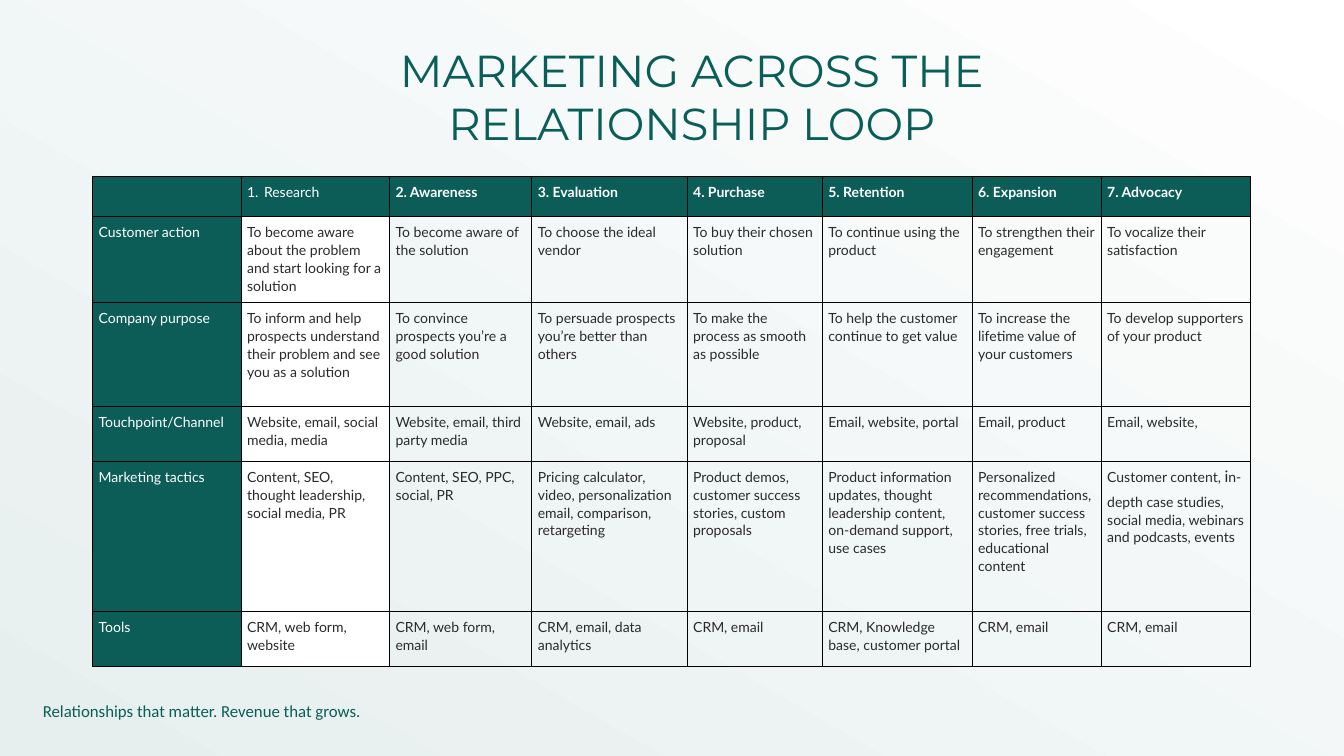
from lxml.etree import SubElement
from pptx import Presentation
from pptx.dml.color import RGBColor
from pptx.enum.text import MSO_ANCHOR as Anchor, MSO_AUTO_SIZE as AutoSize, PP_ALIGN as Align
from pptx.oxml import parse_xml
from pptx.oxml.ns import nsdecls, qn
from pptx.util import Cm, Pt

GREEN = RGBColor(0x0A, 0x5E, 0x58)
HEADER_GREEN = RGBColor(0x0C, 0x5D, 0x58)
INK = RGBColor(0x2B, 0x2A, 0x2A)
WHITE = RGBColor(0xFF, 0xFF, 0xFF)
MIST = RGBColor(0xE6, 0xEE, 0xEE)
BORDER = RGBColor(0, 0, 0)

COLUMN_WIDTHS = [5.61, 5.61, 5.38, 5.87, 5.11, 5.66, 4.88, 5.66]
ROW_HEIGHTS = [1.5, 3.25, 3.94, 2.06, 5.69, 2.06]
CELL_MARGIN = Cm(0.23)
BODY_SIZE = 15

ADVOCACY_TACTICS = [
    ("Customer content, ", 15),
    ("i", 17),
    ("n-depth case studies,", 15),
    (" ", 23),
    ("social media, webinars and podcasts, events", 15),
]

LOOP_STAGES = [
    ["", "Research", "2. Awareness", "3. Evaluation", "4. Purchase",
     "5. Retention", "6. Expansion", "7. Advocacy"],
    ["Customer action",
     "To become aware about the problem and start looking for a solution ",
     "To become aware of the solution",
     "To choose the ideal vendor",
     "To buy their chosen solution",
     "To continue using the product",
     "To strengthen their engagement",
     "To vocalize their satisfaction"],
    ["Company purpose",
     "To inform and help prospects understand their problem and see you as a solution",
     "To convince prospects you’re a good solution",
     "To persuade prospects you’re better than others",
     "To make the process as smooth as possible",
     "To help the customer continue to get value",
     "To increase the lifetime value of your customers",
     "To develop supporters of your product"],
    ["Touchpoint/Channel",
     "Website, email, social media, media",
     "Website, email, third party media",
     "Website, email, ads",
     "Website, product, proposal",
     "Email, website, portal",
     "Email, product",
     "Email, website,"],
    ["Marketing tactics",
     "Content, SEO, thought leadership, social media, PR",
     "Content, SEO, PPC, social, PR",
     "Pricing calculator, video, personalization email, comparison, retargeting",
     "Product demos, customer success stories, custom proposals",
     "Product information updates, thought leadership content, on-demand support, use cases",
     "Personalized recommendations, customer success stories, free trials, educational content",
     ADVOCACY_TACTICS],
    ["Tools",
     "CRM, web form, website",
     "CRM, web form, email",
     "CRM, email, data analytics",
     "CRM, email",
     "CRM, Knowledge base, customer portal",
     "CRM, email",
     "CRM, email"],
]


def add_span(para, text, font_name, size, color, bold=False):
    span = para.add_run()
    span.text = text
    span.font.name = font_name
    span.font.size = Pt(size)
    span.font.bold = bold
    span.font.color.rgb = color


def add_text(page, left, top, width, height, text, font_name, size):
    box = page.shapes.add_textbox(Cm(left), Cm(top), Cm(width), Cm(height))
    box.text_frame.word_wrap = True
    add_span(box.text_frame.paragraphs[0], text, font_name, size, GREEN)
    return box.text_frame


def add_background(page):
    fill = page.background.fill
    fill.gradient()
    fill.gradient_angle = 240
    for stop, color in zip(fill.gradient_stops, (WHITE, MIST)):
        stop.color.rgb = color


def add_footer(page, left, top, width, height):
    frame = add_text(page, left, top, width, height,
                     "Relationships that matter. Revenue that grows.", "Calibri", 18)
    frame.auto_size = AutoSize.SHAPE_TO_FIT_TEXT


def add_title(page, left, top, width, height):
    frame = add_text(page, left, top, width, height,
                     "MARKETING ACROSS THE RELATIONSHIP LOOP", "Montserrat", 48)
    frame.vertical_anchor = Anchor.MIDDLE
    frame.paragraphs[0].alignment = Align.CENTER


def set_borders(cell):
    properties = cell._tc.get_or_add_tcPr()
    for position, side in enumerate(("lnL", "lnR", "lnT", "lnB")):
        properties.insert(position, parse_xml(
            f'<a:{side} {nsdecls("a")} w="{Pt(1)}"><a:solidFill>'
            f'<a:srgbClr val="{BORDER}"/></a:solidFill></a:{side}>'))


def number_paragraph(para):
    properties = para._p.get_or_add_pPr()
    properties.set("marL", str(Cm(0.64)))
    properties.set("indent", str(-Cm(0.64)))
    SubElement(properties, qn("a:buFont"), typeface="+mj-lt")
    SubElement(properties, qn("a:buAutoNum"), type="arabicPeriod")


def fill_cell(cell, content, row, column):
    is_label = row == 0 or column == 0
    cell.margin_left = cell.margin_right = CELL_MARGIN
    cell.margin_top = cell.margin_bottom = CELL_MARGIN
    if is_label or column == 1:
        cell.fill.solid()
        cell.fill.fore_color.rgb = HEADER_GREEN if is_label else WHITE
    else:
        cell.fill.background()
    set_borders(cell)

    para = cell.text_frame.paragraphs[0]
    if (row, column) == (0, 1):
        number_paragraph(para)
    para.space_after = Pt(8)
    if isinstance(content, str):
        para.line_spacing = 1.07
        content = [(content, BODY_SIZE)] if content else []
    for text, size in content:
        add_span(para, text, "Lato", size, WHITE if is_label else INK,
                 bold=row == 0 and column > 1)


def add_stage_table(page, left, top):
    table = page.shapes.add_table(
        len(ROW_HEIGHTS), len(COLUMN_WIDTHS), Cm(left), Cm(top),
        Cm(sum(COLUMN_WIDTHS)), Cm(sum(ROW_HEIGHTS))).table
    table.first_row = table.horz_banding = False
    for column, width in zip(table.columns, COLUMN_WIDTHS):
        column.width = Cm(width)
    for row, height in zip(table.rows, ROW_HEIGHTS):
        row.height = Cm(height)
    for row, contents in enumerate(LOOP_STAGES):
        for column, content in enumerate(contents):
            fill_cell(table.cell(row, column), content, row, column)


def main():
    deck = Presentation()
    deck.slide_width, deck.slide_height = Cm(50.8), Cm(28.58)
    page = deck.slides.add_slide(deck.slide_layouts[6])
    add_background(page)
    add_footer(page, 1.37, 26.37, 19, 1.02)
    add_stage_table(page, 3.5, 6.68)
    add_title(page, 9.55, 1.17, 33.2, 4.93)
    deck.save("out.pptx")


if __name__ == "__main__":
    main()
